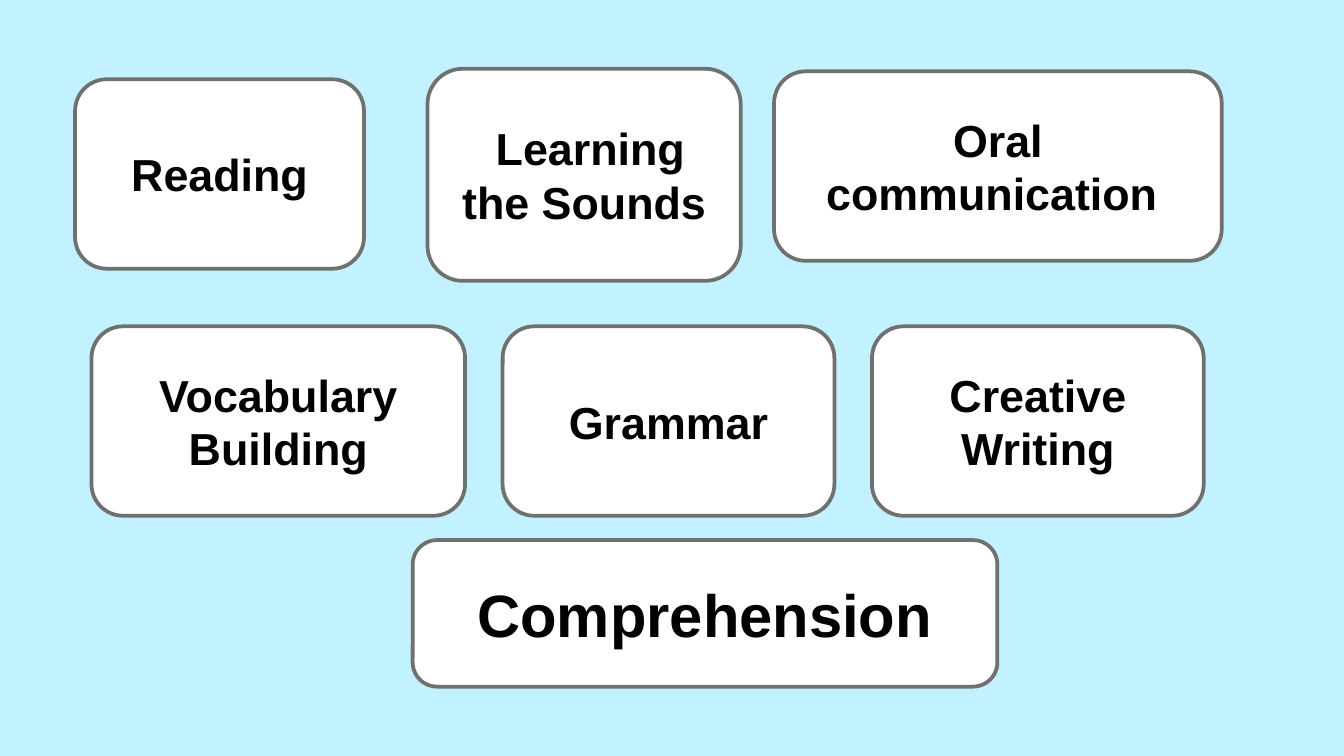
from pptx import Presentation
from pptx.dml.color import RGBColor
from pptx.enum.shapes import MSO_SHAPE
from pptx.enum.text import MSO_ANCHOR, PP_ALIGN
from pptx.util import Cm, Pt

ROUND = MSO_SHAPE.ROUNDED_RECTANGLE
MIDDLE = MSO_ANCHOR.MIDDLE
CENTER = PP_ALIGN.CENTER

COLORS = {"back": "C2F2FF", "card": "FFFFFF", "edge": "707070", "text": "000000"}
HIGH = 3.58  # usual card height
GAP = 0.71  # between cards of the middle row


def color(name):
    return RGBColor.from_string(COLORS[name])


class Board:
    font = "Arial"

    def __init__(self, slide):
        self.slide = slide
        fill = slide.background.fill
        fill.solid()
        fill.fore_color.rgb = color("back")

    def card(self, text, left, top, width, height=HIGH, size=24):
        shape = self.slide.shapes.add_shape(
            ROUND, Cm(left), Cm(top), Cm(width), Cm(height))
        shape.shadow.inherit = False
        shape.fill.solid()
        shape.fill.fore_color.rgb = color("card")
        shape.line.color.rgb = color("edge")
        shape.line.width = Pt(2)
        frame = shape.text_frame
        frame.word_wrap = True
        frame.vertical_anchor = MIDDLE
        para = frame.paragraphs[0]
        para.alignment = CENTER
        run = para.add_run()
        run.text = text
        run.font.name = self.font
        run.font.size = Pt(size)
        run.font.bold = True
        run.font.color.rgb = color("text")

    def row(self, cards, left, top):
        """Lay (text, width) cards side by side with equal gaps."""
        for text, width in cards:
            self.card(text, left, top, width)
            left += width + GAP


def main():
    deck = Presentation()
    deck.slide_width, deck.slide_height = Cm(25.4), Cm(14.29)
    board = Board(deck.slides.add_slide(deck.slide_layouts[6]))

    board.card("Reading", 1.42, 1.5, 5.46)
    board.card(" Learning the Sounds", 8.08, 1.3, 5.92, 4.01)
    board.card("Oral communication ", 14.63, 1.35, 8.46)
    skills = [("Vocabulary Building", 7.06), ("Grammar", 6.27), ("Creative Writing", 6.27)]
    board.row(skills, 1.73, 6.17)
    board.card("Comprehension", 7.8, 10.21, 11.05, 2.77, size=32)

    deck.save("out.pptx")


if __name__ == "__main__":
    main()
